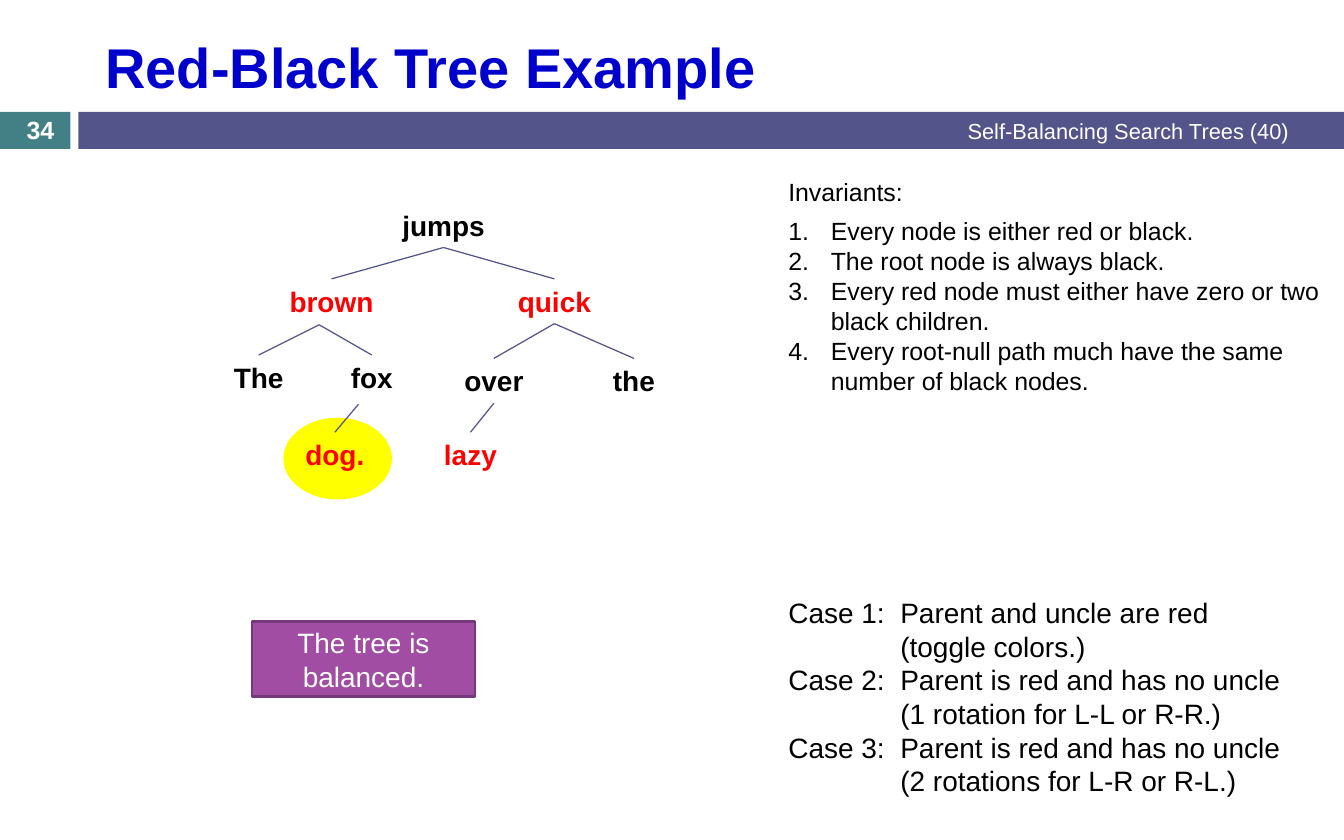
from pptx import Presentation
from pptx.dml.color import RGBColor
from pptx.enum.shapes import MSO_CONNECTOR as Connector, MSO_SHAPE as Shape
from pptx.enum.text import MSO_ANCHOR as Anchor, PP_ALIGN as Align
from pptx.oxml.ns import qn
from pptx.util import Inches, Pt
from lxml.etree import SubElement

COLORS = {
    "white": "FFFFFF", "black": "000000", "red": "FF0000", "title": "0000CC",
    "teal": "438086", "indigo": "53548A", "yellow": "FFFF00",
    "purple": "A04DA3", "plum": "763979",
}
COLUMNS, ROWS = 120, 75
NODE_WIDTH, NODE_HEIGHT = 14.2, 4

NODES = {
    "jumps": (39.6, 18.1, "black"),
    "quick": (49.5, 24.9, "red"),
    "brown": (29.6, 24.9, "red"),
    "over": (44.1, 32, "black"),
    "the": (56.6, 32, "black"),
    "The": (23.1, 31.7, "black"),
    "fox": (33.2, 31.7, "black"),
    "lazy": (42, 38.6, "red"),
    "dog.": (29.9, 38.6, "red"),
}
EDGES = [
    ("jumps", "quick"), ("jumps", "brown"), ("quick", "over"), ("quick", "the"),
    ("brown", "The"), ("brown", "fox"), ("over", "lazy"), ("fox", "dog."),
]
OFFSET_STARTS = {"brown": (28.5, 29), "fox": (32, 36.1)}

INVARIANTS = [
    "Every node is either red or black.",
    "The root node is always black.",
    "Every red node must either have zero or two black children.",
    "Every root-null path much have the same number of black nodes.",
]
CASES = [
    ("Case 1:\tParent and uncle are red", "\t(toggle colors.)"),
    ("Case 2:\tParent is red and has no uncle", "\t(1 rotation for L-L or R-R.)"),
    ("Case 3:\tParent is red and has no uncle", "\t(2 rotations for L-R or R-L.)"),
]


class SlideBuilder:
    font = "Arial"

    def __init__(self, presentation):
        self.column = presentation.slide_width / COLUMNS
        self.row = presentation.slide_height / ROWS
        self.slide = presentation.slides.add_slide(presentation.slide_layouts[6])

    def point(self, column, row):
        return round(column * self.column), round(row * self.row)

    def area(self, left, top, width, height):
        return *self.point(left, top), *self.point(width, height)

    def color(self, name):
        return RGBColor.from_string(COLORS[name])

    def shape(self, kind, area, fill, line=None):
        shape = self.slide.shapes.add_shape(kind, *self.area(*area))
        shape.shadow.inherit = False
        shape.fill.solid()
        shape.fill.fore_color.rgb = self.color(fill)
        if line:
            shape.line.color.rgb = self.color(line)
            shape.line.width = Pt(1.5)
        else:
            shape.line.fill.background()
        return shape

    def set_text(self, shape, lines, size, color="black", bold=False,
                 align=Align.LEFT, anchor=Anchor.TOP):
        frame = shape.text_frame
        frame.text = "\n".join(lines)
        frame.word_wrap = True
        frame.vertical_anchor = anchor
        for paragraph in frame.paragraphs:
            paragraph.alignment = align
            for run in paragraph.runs:
                run.font.name = self.font
                run.font.size = Pt(size)
                run.font.bold = bold
                run.font.color.rgb = self.color(color)
        return shape

    def text(self, area, line, size, **style):
        box = self.slide.shapes.add_textbox(*self.area(*area))
        return self.set_text(box, [line], size, **style)

    def node(self, label, center, top, color):
        area = (center - NODE_WIDTH / 2, top, NODE_WIDTH, NODE_HEIGHT)
        return self.text(area, label, 18, color=color, bold=True, align=Align.CENTER)

    def edge(self, parent, child, start=None):
        begin = self.point(*start) if start else (0, 0)
        connector = self.slide.shapes.add_connector(Connector.STRAIGHT, *begin, 0, 0)
        if not start:
            connector.begin_connect(parent, 2)
        connector.end_connect(child, 0)
        connector.line.color.rgb = self.color("indigo")
        connector.line.width = Pt(0.79)
        SubElement(connector.element.spPr, qn("a:effectLst"))

    def hang(self, paragraph, indent, numbered=False):
        properties = paragraph._p.get_or_add_pPr()
        properties.set("marL", str(Inches(indent)))
        properties.set("indent", str(-Inches(indent)))
        if numbered:
            SubElement(properties, qn("a:buFont"), typeface="+mj-lt")
            SubElement(properties, qn("a:buAutoNum"), type="arabicPeriod")


def main():
    presentation = Presentation()
    presentation.slide_width, presentation.slide_height = Inches(12), Inches(7.5)
    builder = SlideBuilder(presentation)

    builder.shape(Shape.RECTANGLE, (0, 10, 6.3, 3.3), "teal")
    builder.shape(Shape.RECTANGLE, (7, 10, 113, 3.3), "indigo")
    builder.text((45, 9.9, 71.1, 3.5), "Self-Balancing Search Trees (40)", 14,
                 color="white", align=Align.RIGHT, anchor=Anchor.MIDDLE)
    builder.text((0, 10.1, 7.2, 3), "34", 16, color="white", bold=True,
                 align=Align.CENTER, anchor=Anchor.MIDDLE)
    title = builder.text((7, 1.9, 109.1, 8), "Red-Black Tree Example", 36,
                         color="title", bold=True, anchor=Anchor.MIDDLE)
    title.text_frame.margin_left = Inches(0.24)

    builder.shape(Shape.OVAL, (25.3, 37.3, 9.7, 7.3), "yellow")
    nodes = {label: builder.node(label, *place) for label, place in NODES.items()}
    for parent, child in EDGES:
        builder.edge(nodes[parent], nodes[child], OFFSET_STARTS.get(parent))

    result = builder.shape(Shape.RECTANGLE, (22.5, 55.5, 19.9, 6.7), "purple", "plum")
    builder.set_text(result, ["The tree is balanced."], 18, color="white",
                     align=Align.CENTER, anchor=Anchor.MIDDLE)

    invariants = builder.shape(Shape.RECTANGLE, (69.4, 15.3, 49.5, 20.7), "white")
    builder.set_text(invariants, ["Invariants:", *INVARIANTS], 16)
    invariants.text_frame.margin_right = Inches(0.05)
    rules = invariants.text_frame.paragraphs[1:]
    rules[0].space_before = Pt(6)
    for paragraph in rules:
        builder.hang(paragraph, 0.38, numbered=True)

    cases = builder.shape(Shape.RECTANGLE, (69.4, 52.7, 49.5, 19.2), "white")
    builder.set_text(cases, [line for case in CASES for line in case], 18)
    for paragraph in cases.text_frame.paragraphs:
        builder.hang(paragraph, 1)

    presentation.save("out.pptx")


if __name__ == "__main__":
    main()
